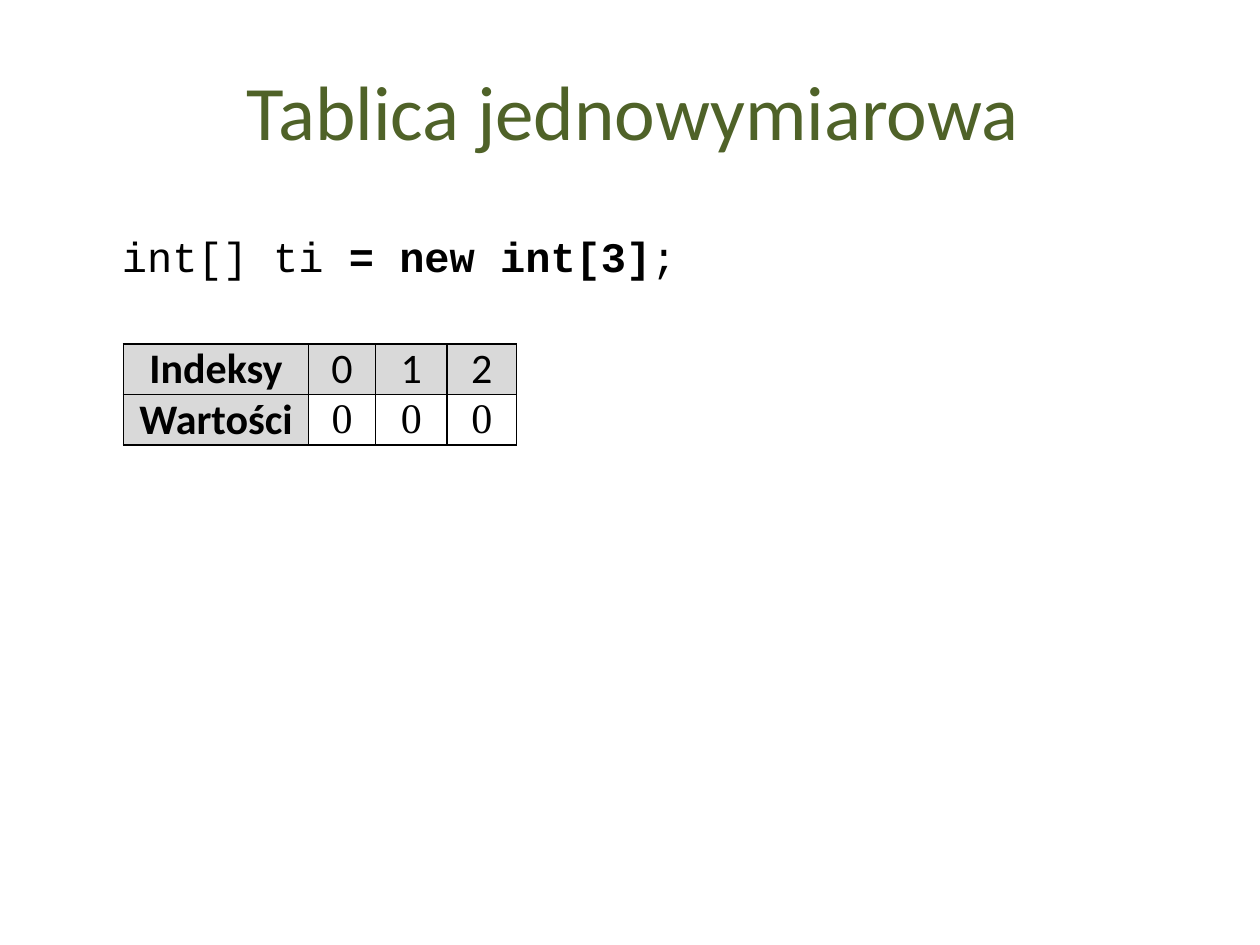
from typing import NamedTuple

from lxml.etree import SubElement
from pptx import Presentation
from pptx.dml.color import RGBColor
from pptx.enum.text import MSO_ANCHOR, MSO_AUTO_SIZE, PP_ALIGN
from pptx.oxml.ns import qn
from pptx.util import Inches, Pt

GREEN = RGBColor(0x4F, 0x62, 0x28)
BLACK = RGBColor(0, 0, 0)
GREY = RGBColor(0xD9, 0xD9, 0xD9)
WHITE = RGBColor(0xFF, 0xFF, 0xFF)

COLUMN_WIDTHS = (1.47, 0.53, 0.57, 0.55)
ROW_HEIGHT = 0.4


class Entry(NamedTuple):
    text: str
    font: str = "Calibri"
    bold: bool = False
    fill: RGBColor = GREY
    anchor: MSO_ANCHOR = MSO_ANCHOR.MIDDLE


def heading(text: str) -> Entry:
    return Entry(text, bold=True, anchor=MSO_ANCHOR.TOP)


ROWS = (
    [heading("Indeksy"), *(Entry(str(index)) for index in range(3))],
    [heading("Wartości"), *[Entry("0", font="Times New Roman", fill=WHITE)] * 3],
)


def style_font(font, name: str, size: float, color: RGBColor, bold: bool = False) -> None:
    font.name = name
    font.size = Pt(size)
    font.color.rgb = color
    font.bold = bold


def add_borders(cell) -> None:
    """Put a 1 pt black line on each side; lines must precede the fill in tcPr."""
    properties = cell._tc.get_or_add_tcPr()
    for side in ("lnL", "lnR", "lnT", "lnB"):
        line = SubElement(properties, qn(f"a:{side}"), w=str(Pt(1)))
        fill = SubElement(line, qn("a:solidFill"))
        SubElement(fill, qn("a:srgbClr"), val=str(BLACK))


def fill_cell(cell, entry: Entry) -> None:
    add_borders(cell)
    cell.fill.solid()
    cell.fill.fore_color.rgb = entry.fill
    cell.vertical_anchor = entry.anchor
    cell.margin_left = cell.margin_right = Inches(0.07)
    cell.margin_top = cell.margin_bottom = 0
    cell.text = entry.text
    paragraph = cell.text_frame.paragraphs[0]
    paragraph.alignment = PP_ALIGN.CENTER
    paragraph.space_after = Pt(6)
    style_font(paragraph.font, entry.font, 24, BLACK, entry.bold)


def add_title(slide) -> None:
    title = slide.shapes.title
    title.left, title.top = Inches(0.2), Inches(0.51)
    title.width, title.height = Inches(9.65), Inches(0.72)
    frame = title.text_frame
    frame.text = "Tablica jednowymiarowa"
    frame.vertical_anchor = MSO_ANCHOR.MIDDLE
    frame.paragraphs[0].alignment = PP_ALIGN.CENTER
    style_font(frame.paragraphs[0].font, "Calibri", 44, GREEN)


def add_declaration(slide) -> None:
    declaration = slide.shapes.add_textbox(
        Inches(0.87), Inches(1.78), Inches(4.64), Inches(0.5))
    frame = declaration.text_frame
    frame.word_wrap = False
    frame.auto_size = MSO_AUTO_SIZE.SHAPE_TO_FIT_TEXT
    code = frame.paragraphs[0]
    style_font(code.font, "Courier New", 24, BLACK)
    for text, bold in (("int[] ti", False), (" = new int[3]", True), (";", False)):
        part = code.add_run()
        part.text = text
        part.font.bold = bold


def add_array_table(slide) -> None:
    array = slide.shapes.add_table(
        len(ROWS), len(COLUMN_WIDTHS), Inches(0.98), Inches(2.73),
        Inches(sum(COLUMN_WIDTHS)), Inches(ROW_HEIGHT * len(ROWS))).table
    array.first_row = array.horz_banding = False
    for column, width in zip(array.columns, COLUMN_WIDTHS):
        column.width = Inches(width)
    for row, entries in zip(array.rows, ROWS):
        row.height = Inches(ROW_HEIGHT)
        for cell, entry in zip(row.cells, entries):
            fill_cell(cell, entry)


def main() -> None:
    presentation = Presentation()
    presentation.slide_width, presentation.slide_height = Inches(10), Inches(7.5)
    slide = presentation.slides.add_slide(
        presentation.slide_layouts.get_by_name("Title Only"))
    add_title(slide)
    add_declaration(slide)
    add_array_table(slide)
    presentation.save("out.pptx")


if __name__ == "__main__":
    main()
